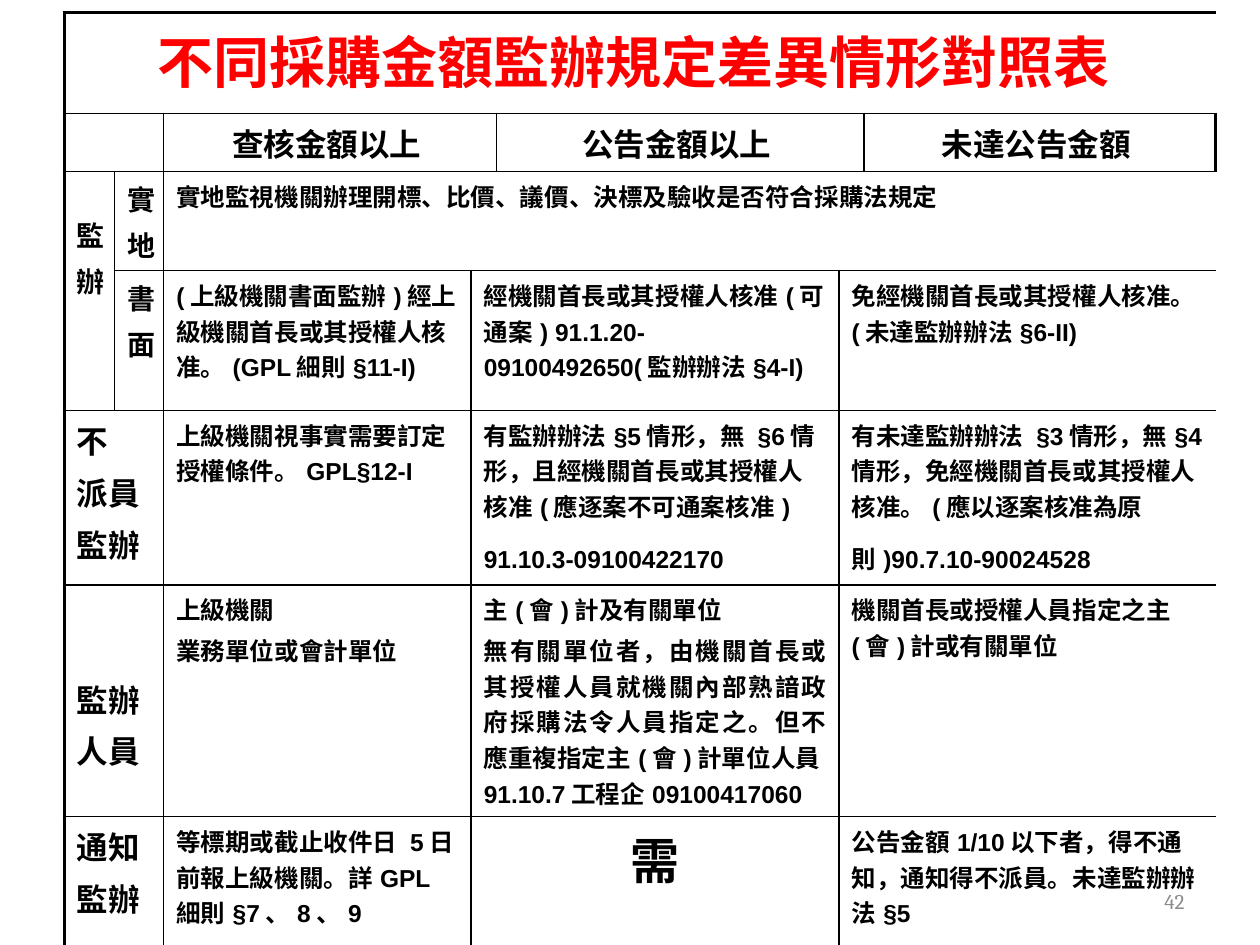
from lxml import etree
from pptx import Presentation
from pptx.dml.color import RGBColor
from pptx.enum.text import MSO_ANCHOR, PP_ALIGN as Align
from pptx.oxml.ns import qn
from pptx.util import Inches, Pt

BLACK = RGBColor(0x00, 0x00, 0x00)
RED = RGBColor(0xFF, 0x00, 0x00)
GRAY = RGBColor(0x8C, 0x8C, 0x8C)

LATIN_FONT = "Arial"
CHINESE_FONT = "Noto Sans CJK SC"
OUTER_LINE, INNER_LINE = 2.25, 1

COLUMN_WIDTHS = [0.4, 0.39, 2.44, 0.2, 2.72, 0.2, 2.79]
ROW_HEIGHTS = [0.8, 0.46, 0.78, 1.11, 1.38, 1.84, 1.12]

# Row, column, row span, column span, size, alignment, paragraphs
HEADINGS = [
    (1, 0, 1, 2, 18, Align.LEFT, []),
    (1, 2, 1, 2, 18, Align.CENTER, ["查核金額以上 "]),
    (1, 4, 1, 2, 18, Align.CENTER, ["公告金額以上 "]),
    (1, 6, 1, 1, 18, Align.CENTER, ["未達公告金額 "]),
    (2, 1, 1, 1, 16, Align.LEFT, ["實", "地"]),
    (3, 1, 1, 1, 16, Align.LEFT, ["書", "面"]),
    (4, 0, 1, 2, 18, Align.LEFT, ["不", "派員", "監辦"]),
    (6, 0, 1, 2, 18, Align.LEFT, ["通知", "監辦"]),
]
RULES = [
    (2, 2, 1, 5, 14, Align.JUSTIFY,
     ["實地監視機關辦理開標、比價、議價、決標及驗收是否符合採購法規定 "]),
    (3, 2, 1, 1, 14, Align.LEFT,
     ["(上級機關書面監辦)經上級機關首長或其授權人核准。(GPL細則§11-I)"]),
    (3, 3, 1, 2, 14, Align.LEFT,
     ["經機關首長或其授權人核准(可通案) 91.1.20-09100492650(監辦辦法§4-I)"]),
    (3, 5, 1, 2, 14, Align.LEFT,
     ["免經機關首長或其授權人核准。(未達監辦辦法§6-II)"]),
    (4, 2, 1, 1, 14, Align.LEFT,
     ["上級機關視事實需要訂定授權條件。GPL§12-I"]),
    (5, 2, 1, 1, 14, Align.LEFT, ["上級機關", "業務單位或會計單位"]),
    (5, 3, 1, 2, 14, Align.JUSTIFY,
     ["主(會)計及有關單位",
      "無有關單位者，由機關首長或其授權人員就機關內部熟諳政府採購法令人員指定之。"
      "但不應重複指定主(會)計單位人員91.10.7工程企09100417060 "]),
    (5, 5, 1, 2, 14, Align.LEFT,
     ["機關首長或授權人員指定之主(會)計或有關單位"]),
    (6, 2, 1, 1, 14, Align.LEFT,
     ["等標期或截止收件日 5日前報上級機關。詳GPL細則§7、8、9"]),
    (6, 3, 1, 2, 28, Align.CENTER, ["需"]),
    (6, 5, 1, 2, 14, Align.LEFT,
     ["公告金額1/10以下者，得不通知，通知得不派員。未達監辦辦法§5"]),
]
# These two end in a large space that opens up the last line
EXEMPTIONS = [
    (4, 3, 1, 2, 14, Align.LEFT,
     ["有監辦辦法§5情形，無 §6情形，且經機關首長或其授權人核准"
      "(應逐案不可通案核准) 91.10.3-09100422170"]),
    (4, 5, 1, 2, 14, Align.LEFT,
     ["有未達監辦辦法 §3情形，無§4情形，免經機關首長或其授權人核准。"
      "(應以逐案核准為原則)90.7.10-90024528"]),
]


def add_run(paragraph, text, size, color=BLACK, font=LATIN_FONT, bold=True):
    run = paragraph.add_run()
    run.text = text
    run.font.size = Pt(size)
    run.font.name = font
    run.font.bold = bold
    run.font.color.rgb = color
    east_asian = etree.SubElement(run._r.get_or_add_rPr(), qn("a:ea"))
    east_asian.set("typeface", CHINESE_FONT)


def set_borders(cell, widths):
    """Draw left, right, top and bottom lines; a width of 0 hides a line."""
    properties = cell._tc.get_or_add_tcPr()
    for index, (side, width) in enumerate(zip("LRTB", widths)):
        line = etree.Element(qn(f"a:ln{side}"), w=str(Pt(width)))
        if width:
            fill = etree.SubElement(line, qn("a:solidFill"))
            etree.SubElement(fill, qn("a:srgbClr"), val=str(BLACK))
        else:
            etree.SubElement(line, qn("a:noFill"))
        properties.insert(index, line)


def frame_block(table, top, left, rows, columns):
    """Outline a merged block, heavier along the edge of the table."""
    bottom, right = top + rows - 1, left + columns - 1
    last_row, last_column = len(ROW_HEIGHTS) - 1, len(COLUMN_WIDTHS) - 1

    def width(position, block_edge, table_edge):
        if position != block_edge:
            return 0
        return OUTER_LINE if position == table_edge else INNER_LINE

    for row in range(top, bottom + 1):
        for column in range(left, right + 1):
            cell = table.cell(row, column)
            cell.fill.background()
            set_borders(cell, [width(column, left, 0),
                               width(column, right, last_column),
                               width(row, top, 0),
                               width(row, bottom, last_row)])


def add_block(table, block, color=BLACK, margin_top=0.05, closing_size=None):
    top, left, rows, columns, size, alignment, texts = block
    cell = table.cell(top, left)
    if rows * columns > 1:
        cell.merge(table.cell(top + rows - 1, left + columns - 1))
    frame_block(table, top, left, rows, columns)
    cell.margin_left = cell.margin_right = Inches(0.1)
    cell.margin_top, cell.margin_bottom = Inches(margin_top), Inches(0.05)
    for index, text in enumerate(texts):
        frame = cell.text_frame
        paragraph = frame.add_paragraph() if index else frame.paragraphs[0]
        paragraph.alignment = alignment
        paragraph.space_before = Pt(size * 0.2)
        add_run(paragraph, text, size, color)
        if closing_size:
            add_run(paragraph, " ", closing_size, color)


def add_rules_table(slide):
    shape = slide.shapes.add_table(
        len(ROW_HEIGHTS), len(COLUMN_WIDTHS), Inches(0.51), Inches(0.1),
        Inches(sum(COLUMN_WIDTHS)), Inches(sum(ROW_HEIGHTS)))
    table = shape.table
    table.first_row = table.horz_banding = False
    for column, width in zip(table.columns, COLUMN_WIDTHS):
        column.width = Inches(width)
    for row, height in zip(table.rows, ROW_HEIGHTS):
        row.height = Inches(height)

    # Title
    add_block(table, (0, 0, 1, 7, 32, Align.CENTER,
                      ["不同採購金額監辦規定差異情形對照表 "]), color=RED)
    # Headings and rules
    for block in HEADINGS + RULES:
        add_block(table, block)
    for block in EXEMPTIONS:
        add_block(table, block, closing_size=28)
    # Row headings set lower in their cells
    add_block(table, (2, 0, 2, 1, 16, Align.LEFT, ["監", "辦"]),
              margin_top=0.34)
    add_block(table, (5, 0, 1, 2, 18, Align.LEFT, ["監辦", "人員"]),
              margin_top=0.72)


def add_page_number(slide, number):
    box = slide.shapes.add_textbox(
        Inches(7.17), Inches(6.95), Inches(2.33), Inches(0.4))
    frame = box.text_frame
    frame.word_wrap = True
    frame.vertical_anchor = MSO_ANCHOR.MIDDLE
    paragraph = frame.paragraphs[0]
    paragraph.alignment = Align.RIGHT
    add_run(paragraph, number, 12, GRAY, "Cambria", bold=False)


def main():
    presentation = Presentation()
    presentation.slide_width = Inches(10)
    presentation.slide_height = Inches(7.5)
    slide = presentation.slides.add_slide(presentation.slide_layouts[6])
    add_rules_table(slide)
    add_page_number(slide, "42")
    presentation.save("out.pptx")


if __name__ == "__main__":
    main()
